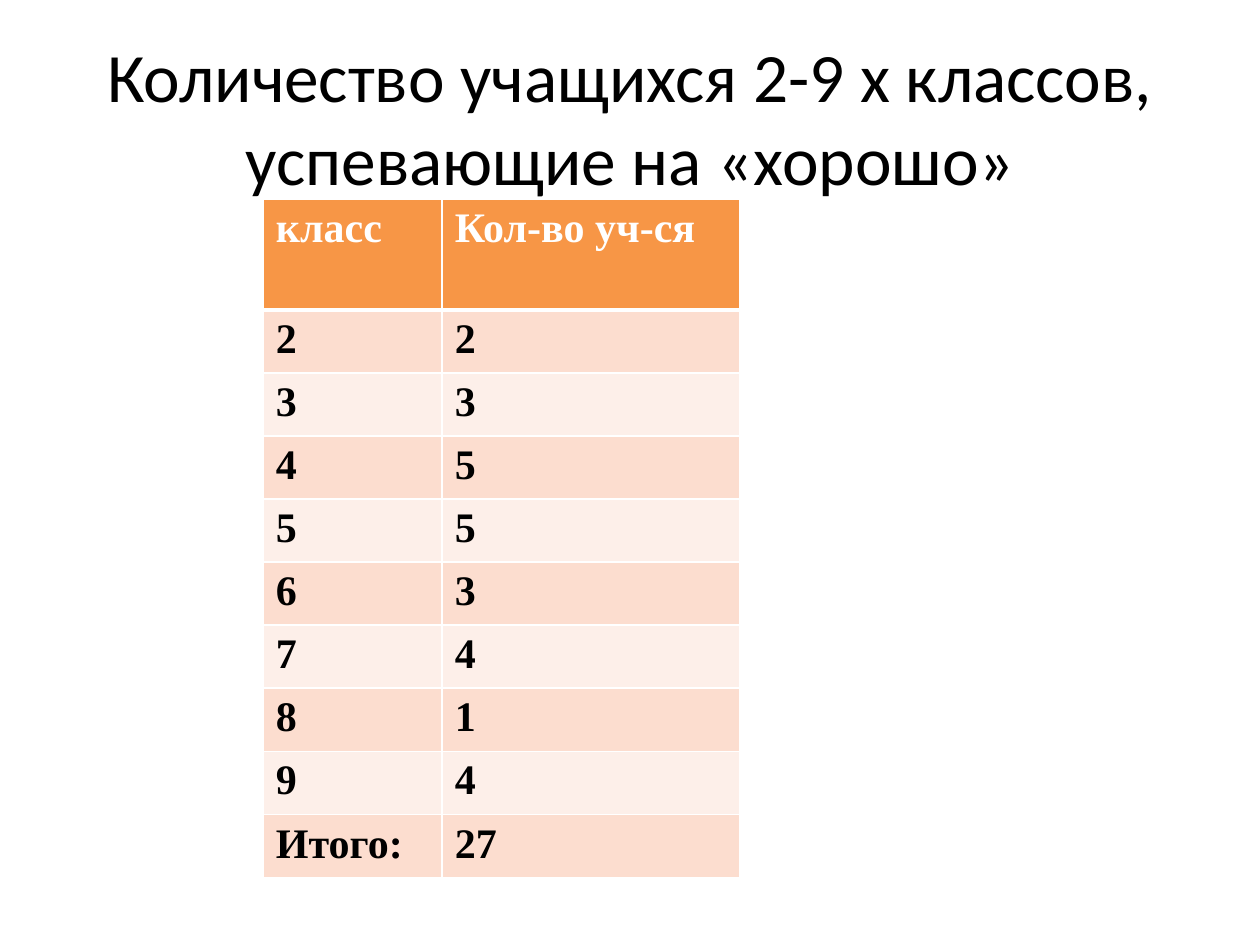
from lxml.etree import SubElement
from pptx import Presentation
from pptx.dml.color import RGBColor
from pptx.enum.text import MSO_ANCHOR as Anchor, PP_ALIGN as Align
from pptx.oxml.ns import qn
from pptx.util import Inches, Pt

WHITE, BLACK, ORANGE = "FFFFFF", "000000", "F79646"
BANDS = ("FCDDCF", "FDEFE9")
HEADER = ("класс", "Кол-во уч-ся")
PUPILS_BY_GRADE = {2: 2, 3: 3, 4: 5, 5: 5, 6: 3, 7: 4, 8: 1, 9: 4}


def rgb(value):
    return RGBColor.from_string(value)


def write_text(frame, text, *, size, font, color=BLACK, bold=False, align=Align.LEFT):
    paragraph = frame.paragraphs[0]
    paragraph.alignment = align
    run = paragraph.add_run()
    run.text = text
    run.font.size = Pt(size)
    run.font.name = font
    run.font.bold = bold
    run.font.color.rgb = rgb(color)


def set_border(cell, side, width, color=WHITE):
    line = SubElement(cell._tc.get_or_add_tcPr(), qn(f"a:ln{side}"), w=str(Pt(width)))
    fill = SubElement(line, qn("a:solidFill"))
    SubElement(fill, qn("a:srgbClr"), val=color)


def style_cell(cell, text, fill, color, bottom_width):
    # Borders come before the fill in the cell properties
    for side, width in (("L", 1), ("R", 1), ("T", 1), ("B", bottom_width)):
        set_border(cell, side, width)
    cell.fill.solid()
    cell.fill.fore_color.rgb = rgb(fill)
    write_text(cell.text_frame, text, size=24, font="Times New Roman",
               color=color, bold=True)


def add_title(slide, left, top, width, height):
    box = slide.shapes.add_textbox(Inches(left), Inches(top), Inches(width), Inches(height))
    frame = box.text_frame
    frame.word_wrap = True
    frame.vertical_anchor = Anchor.MIDDLE
    write_text(frame, "Количество учащихся 2-9 х классов, успевающие на «хорошо»",
               size=39.6, font="Calibri", align=Align.CENTER)


def add_pupil_table(slide, left, top, width, height, header_height=0.88, grade_width=1.42):
    total = ("Итого:", sum(PUPILS_BY_GRADE.values()))
    rows = [HEADER, *PUPILS_BY_GRADE.items(), total]
    table = slide.shapes.add_table(len(rows), len(HEADER), Inches(left), Inches(top),
                                   Inches(width), Inches(height)).table
    table.columns[0].width = Inches(grade_width)
    table.columns[1].width = Inches(width - grade_width)
    body_height = (height - header_height) / (len(rows) - 1)

    for r, values in enumerate(rows):
        is_header = r == 0
        table.rows[r].height = Inches(header_height if is_header else body_height)
        fill = ORANGE if is_header else BANDS[(r - 1) % 2]
        # The header is set off by a thick rule, shared with the row below
        for c, value in enumerate(values):
            style_cell(table.cell(r, c), str(value), fill,
                       color=WHITE if is_header else BLACK,
                       bottom_width=3 if is_header else 1)
            if r == 1:
                top_line = table.cell(r, c)._tc.tcPr.find(qn("a:lnT"))
                top_line.set("w", str(Pt(3)))


def main():
    deck = Presentation()
    deck.slide_width, deck.slide_height = Inches(10), Inches(7.5)
    slide = deck.slides.add_slide(deck.slide_layouts[6])
    add_title(slide, 0.5, 0.3, 9, 1.25)
    add_pupil_table(slide, 2.09, 1.58, 3.78, 5.26)
    deck.save("out.pptx")


if __name__ == "__main__":
    main()
